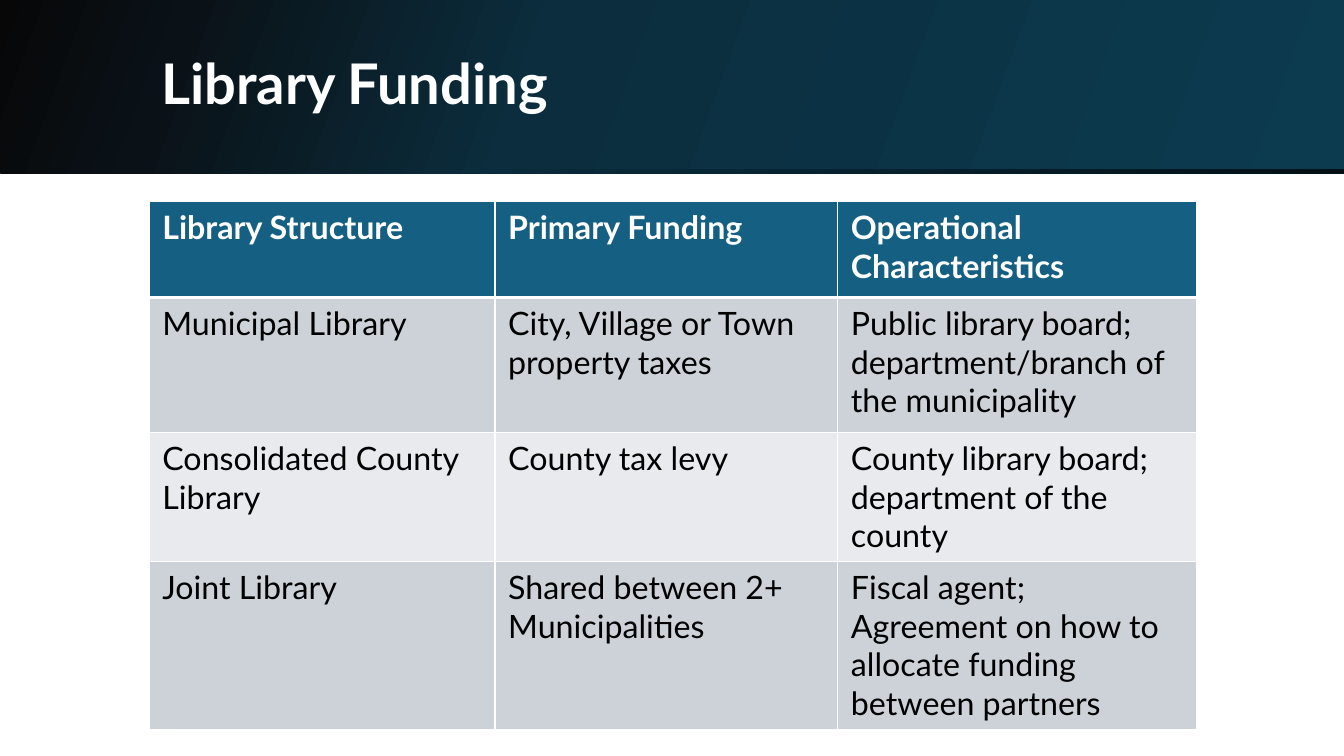
import pptx
import pptx.util
import pptx.dml.color
import pptx.enum.shapes
import pptx.enum.text
import pptx.oxml
import pptx.oxml.ns
from pptx.util import Inches

TITLE = "Library Funding"
ROWS = [
    ("Library Structure", "Primary Funding", "Operational Characteristics"),
    ("Municipal Library", "City, Village or Town property taxes",
     "Public library board; department/branch of the municipality"),
    ("Consolidated County Library", "County tax levy",
     "County library board; department of the county"),
    ("Joint Library", "Shared between 2+ Municipalities",
     "Fiscal agent; Agreement on how to allocate funding between partners"),
]
COL_WIDTHS = [3.43, 3.4, 3.56]
ROW_HEIGHTS = [0.95, 1.34, 1.28, 1.67]
HEADER_FILL, BAND_FILLS = "156082", ["CCD2D8", "E8EAED"]
# Banner layers: angle, then stops of position %, colour, opacity %
BANNER_LAYERS = [
    (20, [(0, "070707", 100), (14, "0A1218", 100), (40, "0B2D3D", 100),
          (100, "0C3B50", 100)]),
    (80, [(0, "000000", 0), (62, "000000", 0), (100, "000000", 75)]),
]
FONT = "Lato"
NS = pptx.oxml.ns.nsdecls("a")


def color(value):
    return pptx.dml.color.RGBColor.from_string(value)


def add_run(p, text, size, value, bold):
    r = p.add_run()
    r.text = text
    r.font.name = FONT
    r.font.size = pptx.util.Pt(size)
    r.font.bold = bold
    r.font.color.rgb = color(value)


def add_banner_layer(s, angle, stops):
    sp = s.shapes.add_shape(pptx.enum.shapes.MSO_SHAPE.RECTANGLE, 0, 0,
                            Inches(13.33), Inches(1.72))
    sp.shadow.inherit = False
    sp.line.fill.background()
    gs = "".join(
        f'<a:gs pos="{pos * 1000}"><a:srgbClr val="{value}">'
        f'<a:alpha val="{alpha * 1000}"/></a:srgbClr></a:gs>'
        for pos, value, alpha in stops)
    fill = pptx.oxml.parse_xml(
        f'<a:gradFill {NS} rotWithShape="1"><a:gsLst>{gs}</a:gsLst>'
        f'<a:lin ang="{angle * 60000}" scaled="0"/></a:gradFill>')
    spPr = sp.element.spPr
    spPr.insert(list(spPr).index(spPr.prstGeom) + 1, fill)


def set_borders(cell, widths):
    """Draw white borders; widths maps each side tag to points."""
    tcPr = cell._tc.get_or_add_tcPr()
    for i, (side, width) in enumerate(widths.items()):
        tcPr.insert(i, pptx.oxml.parse_xml(
            f'<a:{side} {NS} w="{width * 12700}"><a:solidFill>'
            f'<a:srgbClr val="FFFFFF"/></a:solidFill></a:{side}>'))


def add_funding_table(s):
    table = s.shapes.add_table(
        len(ROWS), len(COL_WIDTHS), Inches(1.48), Inches(2),
        Inches(sum(COL_WIDTHS)), Inches(sum(ROW_HEIGHTS))).table
    for column, width in zip(table.columns, COL_WIDTHS):
        column.width = Inches(width)
    for i, (row, height, texts) in enumerate(
            zip(table.rows, ROW_HEIGHTS, ROWS)):
        row.height = Inches(height)
        header = i == 0
        for cell, text in zip(row.cells, texts):
            cell.margin_left = cell.margin_right = Inches(0.13)
            cell.margin_top = cell.margin_bottom = Inches(0.06)
            cell.fill.solid()
            cell.fill.fore_color.rgb = color(
                HEADER_FILL if header else BAND_FILLS[(i - 1) % 2])
            set_borders(cell, {"lnL": 1, "lnR": 1, "lnT": 3 if i == 1 else 1,
                               "lnB": 3 if header else 1})
            add_run(cell.text_frame.paragraphs[0], text, 23,
                    "FFFFFF" if header else "000000", header)


prs = pptx.Presentation()
prs.slide_width, prs.slide_height = Inches(13.33), Inches(7.5)
s = prs.slides.add_slide(prs.slide_layouts[6])

for angle, stops in BANNER_LAYERS:
    add_banner_layer(s, angle, stops)

tf = s.shapes.add_textbox(Inches(1.5), Inches(0.38),
                          Inches(10.98), Inches(0.96)).text_frame
tf.word_wrap = True
tf.vertical_anchor = pptx.enum.text.MSO_ANCHOR.MIDDLE
p = tf.paragraphs[0]
p.line_spacing = 0.9
add_run(p, TITLE, 40, "FFFFFF", True)

add_funding_table(s)
prs.save("out.pptx")
